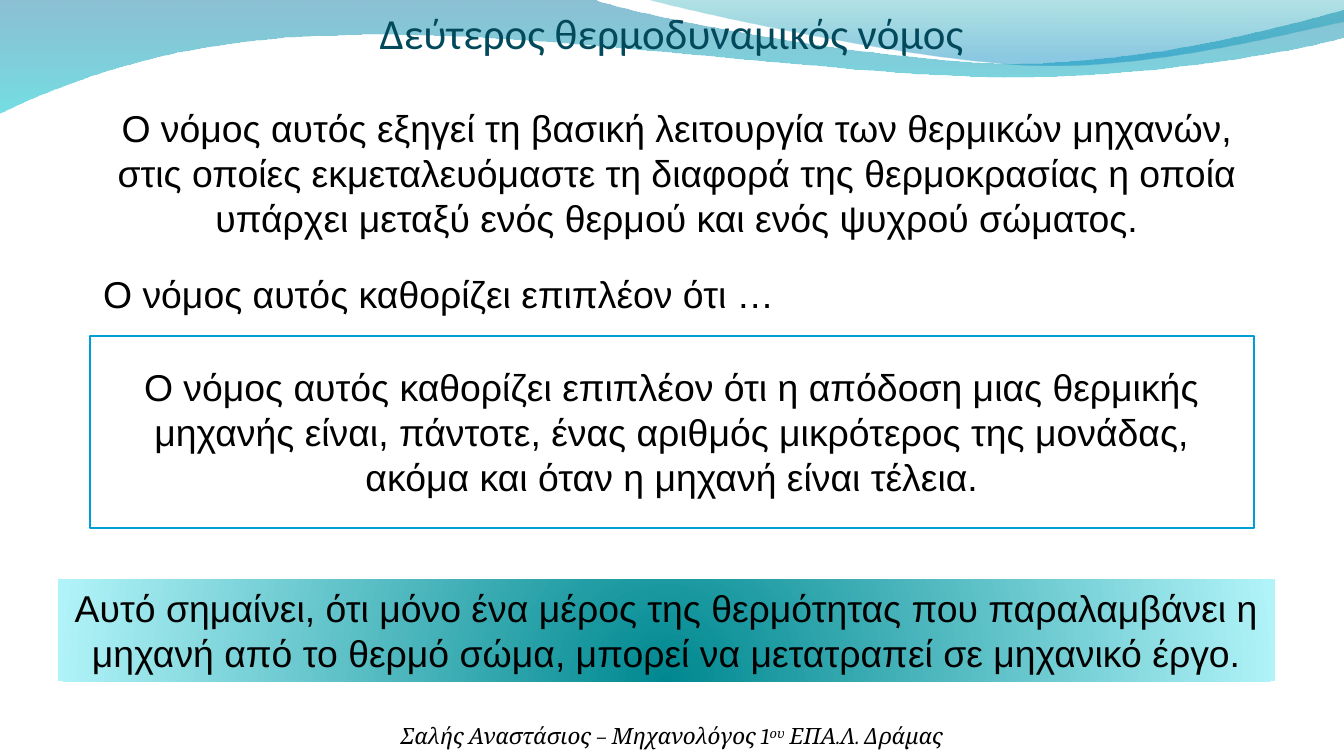
from dataclasses import dataclass

from pptx import Presentation
from pptx.dml.color import RGBColor
from pptx.enum.shapes import MSO_SHAPE
from pptx.enum.text import MSO_ANCHOR, MSO_AUTO_SIZE, PP_ALIGN
from pptx.oxml import parse_xml
from pptx.oxml.ns import nsdecls, qn
from pptx.util import Cm, Pt

RECTANGLE = MSO_SHAPE.RECTANGLE
TOP, MIDDLE = MSO_ANCHOR.TOP, MSO_ANCHOR.MIDDLE
NO_AUTOFIT = MSO_AUTO_SIZE.NONE
LEFT, CENTER = PP_ALIGN.LEFT, PP_ALIGN.CENTER
TITLE_ONLY = 5


@dataclass(frozen=True)
class TextStyle:
    font: str
    size: float
    color: str
    italic: bool = False


@dataclass(frozen=True)
class Theme:
    title = TextStyle("Calibri", 23, "03495C")
    body = TextStyle("Arial", 20, "000000")
    footer = TextStyle("Cambria", 12, "000000", italic=True)
    paper = "FFFFFF"
    frame = "009DD9"
    # Gradient stops: position %, colour, opacity %
    lower_wave = ((0, "0074A0", 45), (100, "00C4CD", 55))
    upper_wave = ((20, "008ABF", 45), (100, "00A0A8", 30))
    band = ((0, "008890", 100), (100, "B0F3F8", 100))


THEME = Theme()
LINEAR = '<a:lin ang="{}" scaled="0"/>'
FROM_BOTTOM = ('<a:path path="circle">'
               '<a:fillToRect l="50000" t="100000" r="50000" b="0"/></a:path>')


def set_gradient(shape, stops, direction):
    """Fill a shape with a gradient whose stops carry opacity."""
    stop_list = "".join(
        f'<a:gs pos="{pos * 1000}"><a:srgbClr val="{color}">'
        f'<a:alpha val="{opacity * 1000}"/></a:srgbClr></a:gs>'
        for pos, color, opacity in stops)
    gradient = parse_xml(f'<a:gradFill {nsdecls("a")} rotWithShape="1">'
                         f'<a:gsLst>{stop_list}</a:gsLst>{direction}</a:gradFill>')
    shape.fill.background()
    properties = shape._element.spPr
    properties.replace(properties.find(qn("a:noFill")), gradient)


def add_run(paragraph, text, style, superscript=False):
    run = paragraph.add_run()
    run.text = text
    run.font.name = style.font
    run.font.size = Pt(style.size)
    run.font.italic = style.italic
    run.font.color.rgb = RGBColor.from_string(style.color)
    if superscript:
        run.font._element.set("baseline", "30000")


def place(shape, box):
    shape.left, shape.top, shape.width, shape.height = box


def prepare_frame(shape, anchor=TOP):
    frame = shape.text_frame
    frame.word_wrap = True
    frame.auto_size = NO_AUTOFIT
    frame.vertical_anchor = anchor
    frame.margin_left = frame.margin_right = Cm(0.25)
    frame.margin_top = frame.margin_bottom = Cm(0.12)
    frame.paragraphs[0].alignment = CENTER
    return frame


def add_panel(slide, box):
    panel = slide.shapes.add_shape(RECTANGLE, *box)
    panel.shadow.inherit = False
    return panel


def bend_segments(shape, segments):
    """Turn each run of three line ends into one cubic curve."""
    line_ends = iter(list(shape._element.iter(qn("a:lnTo"))))
    for segment in segments:
        ends = [next(line_ends) for _ in segment]
        if len(ends) == 3:
            curve = parse_xml(f'<a:cubicBezTo {nsdecls("a")}/>')
            ends[0].addprevious(curve)
            for end in ends:
                curve.append(end[0])
                end.getparent().remove(end)


def add_wave(slide, box, start, segments, stops, angle):
    """Draw an outline; a segment is one line end or three curve points."""
    left, top = box[:2]
    points = [(left + Cm(x), top + Cm(y))
              for x, y in [start, *(point for segment in segments for point in segment)]]
    builder = slide.shapes.build_freeform(*points[0])
    builder.add_line_segments(points[1:], close=True)
    wave = builder.convert_to_shape()
    bend_segments(wave, segments)
    wave.shadow.inherit = False
    wave.line.fill.background()
    set_gradient(wave, stops, LINEAR.format(angle * 60000))


def add_header_waves(slide, box):
    add_wave(slide, box, (0, 0), [
        [(11.18, -0.03)],
        [(12.09, 0.33), (16.87, 1.19), (19.25, 1.19)],
        [(21.67, 1.19), (24.33, 0.48), (25.4, 0.18)],
        [(25.43, 0.69)],
        [(24.97, 0.84), (22.1, 1.45), (18.95, 1.45)],
        [(15.8, 1.42), (9.7, 0.53), (6.53, 0.66)],
        [(3.28, 0.69), (1.17, 1.57), (-0.03, 2.14)],
    ], THEME.lower_wave, 90)
    add_wave(slide, box, (12.17, -0.03), [
        [(12.93, 0.2), (17.32, 1.17), (19.53, 1.24)],
        [(21.74, 1.32), (24.41, 0.61), (25.4, 0.41)],
        [(25.4, 0)],
    ], THEME.upper_wave, 270)


def add_title(slide, box):
    title = slide.shapes.title
    place(title, box)
    frame = prepare_frame(title, MIDDLE)
    add_run(frame.paragraphs[0], "Δεύτερος θερμοδυναμικός νόμος", THEME.title)
    # Bring the title in front of the waves
    slide.shapes._spTree.append(title._element)


def add_introduction(slide, box):
    frame = prepare_frame(slide.shapes.add_textbox(*box))
    add_run(frame.paragraphs[0],
            "Ο νόμος αυτός εξηγεί τη βασική λειτουργία των θερμικών μηχανών, στις οποίες "
            "εκμεταλευόμαστε τη διαφορά της θερμοκρασίας η οποία υπάρχει μεταξύ ενός "
            "θερμού και ενός ψυχρού σώματος.", THEME.body)
    lead_in = frame.add_paragraph()
    lead_in.alignment = LEFT
    lead_in.space_before = Pt(17)
    add_run(lead_in, "Ο νόμος αυτός καθορίζει επιπλέον ότι …", THEME.body)


def add_efficiency_statement(slide, box):
    panel = add_panel(slide, box)
    panel.fill.solid()
    panel.fill.fore_color.rgb = RGBColor.from_string(THEME.paper)
    panel.line.color.rgb = RGBColor.from_string(THEME.frame)
    panel.line.width = Pt(1)
    frame = prepare_frame(panel)
    frame.margin_top = Cm(0.54)
    add_run(frame.paragraphs[0],
            "Ο νόμος αυτός καθορίζει επιπλέον ότι η απόδοση μιας θερμικής μηχανής είναι, "
            "πάντοτε, ένας αριθμός μικρότερος της μονάδας, ακόμα και όταν η μηχανή είναι "
            "τέλεια.", THEME.body)


def add_conclusion(slide, box):
    band = add_panel(slide, box)
    band.line.fill.background()
    set_gradient(band, THEME.band, FROM_BOTTOM)
    frame = prepare_frame(band)
    add_run(frame.paragraphs[0],
            "Αυτό σημαίνει, ότι μόνο ένα μέρος της θερμότητας που παραλαμβάνει η μηχανή "
            "από το θερμό σώμα, μπορεί να μετατραπεί σε μηχανικό έργο.", THEME.body)


def add_footer(slide, box):
    credit = prepare_frame(slide.shapes.add_textbox(*box)).paragraphs[0]
    add_run(credit, "Σαλής Αναστάσιος – Μηχανολόγος 1", THEME.footer)
    add_run(credit, "ου", THEME.footer, superscript=True)
    add_run(credit, " ΕΠΑ.Λ. Δράμας", THEME.footer)


def main():
    deck = Presentation()
    deck.slide_width, deck.slide_height = Cm(25.4), Cm(14.29)
    slide = deck.slides.add_slide(deck.slide_layouts[TITLE_ONLY])
    add_header_waves(slide, (0, 0, deck.slide_width, Cm(2.14)))
    add_footer(slide, (Cm(1.3), Cm(13.54), Cm(22.8), Cm(0.75)))
    add_title(slide, (Cm(0.5), 0, Cm(24.4), Cm(1.22)))
    add_introduction(slide, (Cm(1.7), Cm(1.87), Cm(22.2), Cm(4.22)))
    add_efficiency_statement(slide, (Cm(1.7), Cm(6.35), Cm(22), Cm(3.63)))
    add_conclusion(slide, (Cm(1.1), Cm(10.95), Cm(23), Cm(1.93)))
    deck.save("out.pptx")


if __name__ == "__main__":
    main()
